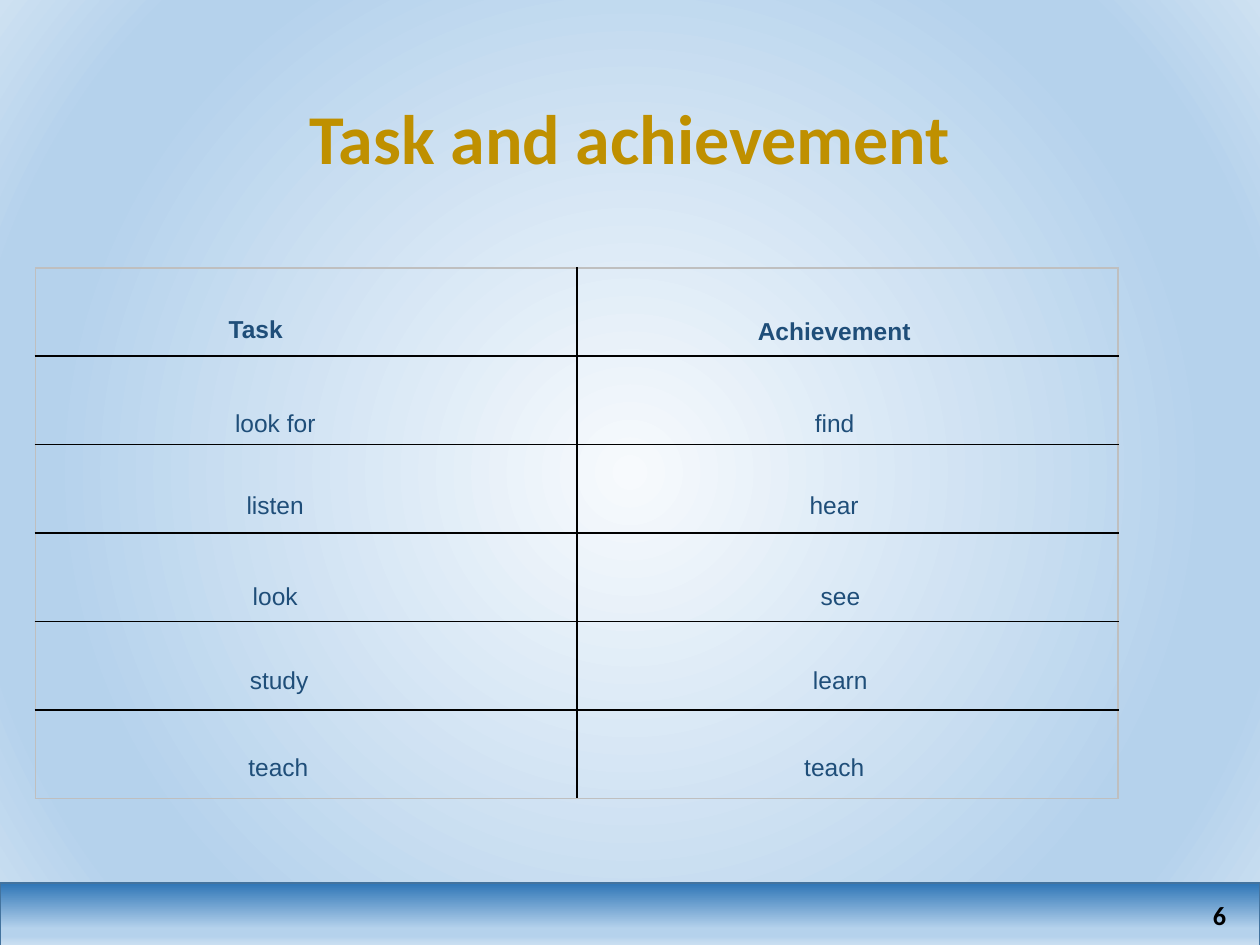
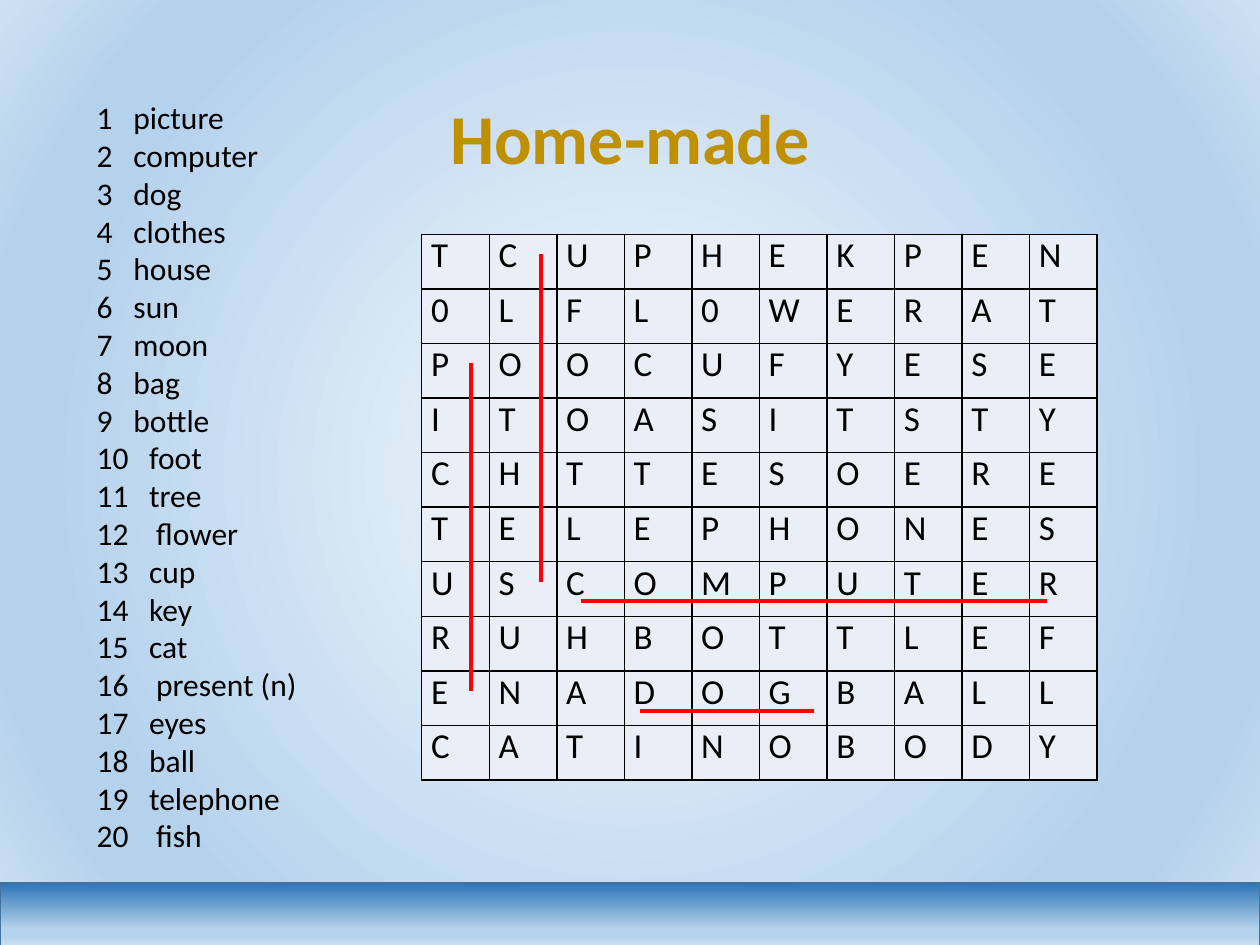
import pptx
import pptx.dml.color
import pptx.enum.shapes
import pptx.enum.text
import pptx.oxml
import pptx.oxml.ns
import pptx.util

Pt = pptx.util.Pt
RGBColor = pptx.dml.color.RGBColor
Align = pptx.enum.text.PP_ALIGN
Anchor = pptx.enum.text.MSO_ANCHOR
qn = pptx.oxml.ns.qn
NAMESPACE = pptx.oxml.ns.nsdecls("a")

BLACK = RGBColor(0x00, 0x00, 0x00)
RED = RGBColor(0xFF, 0x00, 0x00)
GOLD = RGBColor(0xBF, 0x90, 0x00)
DARK_GOLD = RGBColor(0x80, 0x60, 0x00)
NAVY = RGBColor(0x1F, 0x4E, 0x79)
BAND_EDGE = RGBColor(0x43, 0x73, 0x9E)
BAND_BLUE = RGBColor(0x2E, 0x75, 0xB6)
SKY = RGBColor(0xB5, 0xD2, 0xEC)
PALE_SKY = RGBColor(0xCE, 0xE1, 0xF2)
NEAR_WHITE = RGBColor(0xF7, 0xFA, 0xFD)
CELL_BLUE = RGBColor(0xEA, 0xEF, 0xF7)
GREY = RGBColor(0xBF, 0xBF, 0xBF)

BACKDROP_STOPS = [(0, NEAR_WHITE), (74, SKY), (83, SKY), (100, PALE_SKY)]
BAND_STOPS = [(0, BAND_BLUE), (72, SKY), (83, SKY), (100, PALE_SKY)]
RADIAL = '<a:path {} path="circle"><a:fillToRect l="50000" t="50000" r="50000" b="50000"/></a:path>'
DOWNWARD = '<a:lin {} ang="5400000" scaled="0"/>'

TITLE = {"name": "Calibri", "size": Pt(40), "bold": True, "color": GOLD}
PAGE = {"name": "Calibri", "size": Pt(15), "bold": True, "color": BLACK}
VERB = {"name": "Arial", "size": Pt(14), "bold": False, "color": NAVY}
HEADING = VERB | {"bold": True}
WORD = {"name": "Calibri", "size": Pt(18), "color": BLACK}
LETTER = WORD | {"size": Pt(20)}

VERB_ROWS = [
    (160, ("Task", 65.5, 161.3), ("Achievement", 387.4, 178.6)),
    (214, ("look for", 87.1, 140.4), ("find", 404.6, 144.7)),
    (261, ("listen", 91.4, 131.8), ("hear", 396, 161.3)),
    (313, ("look", 91.4, 131.8), ("see", 401.8, 157)),
    (361, ("study", 89.3, 140.4), ("learn", 422.6, 115.2)),
    (410.5, ("teach", 116.6, 85), ("teach", 434.2, 85)),
]
LETTER_ROWS = [
    "TCUPHEKPEN",
    "0LFL0WERAT",
    "POOCUFYESE",
    "ITOASITSTY",
    "CHTTESOERE",
    "TELEPHONES",
    "USCOMPUTER",
    "RUHBOTTLEF",
    "ENADOGBALL",
    "CATINOBODY",
]
HIDDEN_WORDS = [
    "picture", "computer", "dog", "clothes", "house", "sun", "moon", "bag", "bottle", "foot",
    "tree", "flower", "cup", "key", "cat", "present (n)", "eyes", "ball", "telephone", "fish",
]
WIDE_GAPS = {12, 16, 20}
FOUND_WORDS = [
    (269.3, 207.4, 269.3, 394.6),
    (331.9, 343.4, 598.3, 343.4),
    (365.8, 406.1, 465.1, 406.1),
    (308.9, 145.4, 308.9, 332.6),
]


def set_all(target, values):
    for key, value in values.items():
        if key == "color":
            target.color.rgb = value
        else:
            setattr(target, key, value)


def set_gradient(fill, owner, stops, direction):
    fill.gradient()
    gradient = owner.find(".//" + qn("a:gradFill"))
    gradient.clear()
    marks = "".join(
        f'<a:gs pos="{position * 1000}"><a:srgbClr val="{color}"/></a:gs>' for position, color in stops
    )
    gradient.append(pptx.oxml.parse_xml(f"<a:gsLst {NAMESPACE}>{marks}</a:gsLst>"))
    gradient.append(pptx.oxml.parse_xml(direction.format(NAMESPACE)))


def outline_xml(tag, color, width):
    return pptx.oxml.parse_xml(
        f'<a:{tag} {NAMESPACE} w="{Pt(width)}"><a:solidFill><a:srgbClr val="{color}"/></a:solidFill></a:{tag}>'
    )


class Deck:
    def __init__(self):
        self.presentation = pptx.Presentation()
        set_all(self.presentation, {"slide_width": Pt(720), "slide_height": Pt(540)})
        self.slide = None

    def new_slide(self, title):
        self.slide = self.presentation.slides.add_slide(self.presentation.slide_layouts[6])
        set_gradient(self.slide.background.fill, self.slide.element, BACKDROP_STOPS, RADIAL)
        self.band()
        heading = self.text([title], (49.5, 28.8, 621, 104.4), TITLE, Align.CENTER, Anchor.MIDDLE)
        paragraph = heading.paragraphs[0]
        paragraph.line_spacing = 0.9
        paragraph.runs[0].font._element.insert(0, outline_xml("ln", DARK_GOLD, 0.75))

    def band(self):
        band = self.slide.shapes.add_shape(
            pptx.enum.shapes.MSO_SHAPE.RECTANGLE, 0, Pt(504.5), Pt(720), Pt(36.5)
        )
        band.shadow.inherit = False
        set_gradient(band.fill, band.element, BAND_STOPS, DOWNWARD)
        set_all(band.line, {"color": BAND_EDGE, "width": Pt(1)})

    def text(self, lines, box, font, align=Align.LEFT, anchor=Anchor.TOP, **frame_values):
        frame = self.slide.shapes.add_textbox(*map(Pt, box)).text_frame
        set_all(frame, {"word_wrap": True, "vertical_anchor": anchor} | frame_values)
        for index, line in enumerate(lines):
            paragraph = frame.add_paragraph() if index else frame.paragraphs[0]
            paragraph.alignment = align
            run = paragraph.add_run()
            run.text = line
            set_all(run.font, font)
        return frame

    def table(self, rows, box, edge, fill=None):
        row_count, column_count = len(rows), len(rows[0])
        table = self.slide.shapes.add_table(row_count, column_count, *map(Pt, box)).table
        set_all(table, {"first_row": False, "horz_banding": False})
        for column in table.columns:
            column.width = Pt(box[2] / column_count)
        for r, letters in enumerate(rows):
            table.rows[r].height = Pt(box[3] / row_count)
            for c, letter in enumerate(letters):
                cell = table.cell(r, c)
                if fill is None:
                    cell.fill.background()
                else:
                    cell.fill.solid()
                    cell.fill.fore_color.rgb = fill
                sides = {
                    "lnL": c == 0,
                    "lnR": c == column_count - 1,
                    "lnT": r == 0,
                    "lnB": r == row_count - 1,
                }
                for index, (side, outer) in enumerate(sides.items()):
                    border = outline_xml(side, edge if outer else BLACK, 1)
                    cell._tc.get_or_add_tcPr().insert(index, border)
                if letter:
                    margins = {"margin_left": 5.4, "margin_right": 5.4, "margin_top": 0, "margin_bottom": 0}
                    set_all(cell, {key: Pt(value) for key, value in margins.items()})
                    paragraph = cell.text_frame.paragraphs[0]
                    paragraph.space_after = Pt(6)
                    run = paragraph.add_run()
                    run.text = letter
                    set_all(run.font, LETTER)

    def line(self, ends):
        line = self.slide.shapes.add_connector(
            pptx.enum.shapes.MSO_CONNECTOR.STRAIGHT, *map(Pt, ends)
        )
        set_all(line.line, {"color": RED, "width": Pt(2.25)})
        line.element.spPr.append(pptx.oxml.parse_xml(f"<a:effectLst {NAMESPACE}/>"))


def task_slide(deck):
    deck.new_slide("Task and achievement")
    deck.text(["6"], (670.3, 509.8, 37.4, 25.9), PAGE, Align.RIGHT, Anchor.MIDDLE)
    deck.table([["", ""]] * len(VERB_ROWS), (20.2, 153, 618.8, 303.4), GREY)
    for index, (top, *verbs) in enumerate(VERB_ROWS):
        for verb, left, width in verbs:
            font = VERB if index else HEADING
            box = (left, top + (verb == "Achievement") * 1.5, width, 36)
            deck.text([verb], box, font, Align.CENTER, Anchor.BOTTOM, margin_bottom=0)


def puzzle_slide(deck):
    deck.new_slide("Home-made")
    deck.table(LETTER_ROWS, (241, 133.9, 386, 312), BLACK, CELL_BLUE)
    lines = [f"{number}\t{word}" for number, word in enumerate(HIDDEN_WORDS, 1)]
    words = deck.text(lines, (48.2, 52.6, 136, 487.4), WORD)
    for number, paragraph in enumerate(words.paragraphs, 1):
        gap = 21 if number < 10 else 34 if number in WIDE_GAPS else 30
        paragraph._p.get_or_add_pPr().append(
            pptx.oxml.parse_xml(f'<a:tabLst {NAMESPACE}><a:tab pos="{Pt(gap)}" algn="l"/></a:tabLst>')
        )
    for ends in FOUND_WORDS:
        deck.line(ends)


def main():
    deck = Deck()
    task_slide(deck)
    puzzle_slide(deck)
    deck.presentation.save("out.pptx")


if __name__ == "__main__":
    main()
